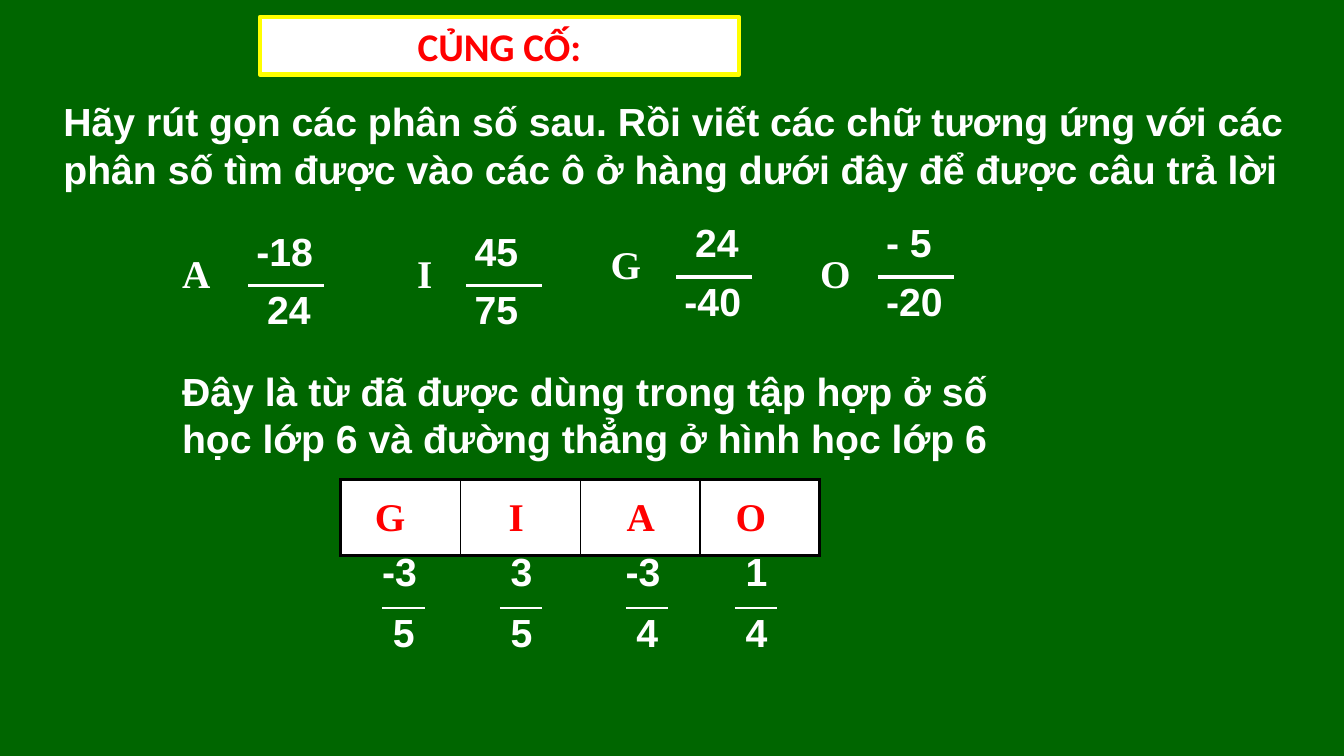
from lxml.etree import SubElement
from pptx import Presentation
from pptx.dml.color import RGBColor
from pptx.enum.shapes import MSO_CONNECTOR as Line
from pptx.enum.text import MSO_ANCHOR as Anchor, MSO_AUTO_SIZE as AutoSize, PP_ALIGN as Align
from pptx.oxml.ns import qn
from pptx.util import Cm, Pt

GREEN, WHITE, RED, YELLOW, BLACK = "006600", "FFFFFF", "FF0000", "FFFF00", "000000"
SIGN_WIDTH = 0.27


def color(hex_string):
    return RGBColor.from_string(hex_string)


def paint(target, hex_string):
    target.fill.solid()
    target.fill.fore_color.rgb = color(hex_string)


def write(frame, text, font="Arial", size=28, ink=WHITE, align=Align.LEFT,
          anchor=Anchor.TOP, inset=None):
    frame.word_wrap = True
    frame.auto_size = AutoSize.NONE
    frame.vertical_anchor = anchor
    if inset is not None:
        frame.margin_left = frame.margin_right = Cm(inset)
        frame.margin_top = frame.margin_bottom = Cm(inset)
    paragraph = frame.paragraphs[0]
    paragraph.alignment = align
    run = paragraph.add_run()
    run.text = text
    run.font.name = font
    run.font.size = Pt(size)
    run.font.bold = True
    run.font.color.rgb = color(ink)


def draw_border(cell, side, width):
    edge = SubElement(cell._tc.get_or_add_tcPr(), qn(f"a:ln{side}"), w=str(Pt(width)))
    SubElement(SubElement(edge, qn("a:solidFill")), qn("a:srgbClr"), val=BLACK)


class Board:
    def __init__(self, slide):
        self.slide = slide
        paint(slide.background, GREEN)

    def title(self, text, x, y, width, height):
        heading = self.slide.shapes.title
        heading.left, heading.top = Cm(x), Cm(y)
        heading.width, heading.height = Cm(width), Cm(height)
        paint(heading, WHITE)
        heading.line.color.rgb = color(YELLOW)
        heading.line.width = Pt(3)
        write(heading.text_frame, text, font="Calibri", ink=RED,
              align=Align.CENTER, anchor=Anchor.MIDDLE)

    def text(self, text, x, y, width, height, **style):
        box = self.slide.shapes.add_textbox(Cm(x), Cm(y), Cm(width), Cm(height))
        write(box.text_frame, text, **style)

    def letter(self, text, x, y, ink=WHITE):
        self.text(text, x, y, 1.9, 1.45, font="Times New Roman", ink=ink)

    def bar(self, x, y, length, weight):
        bar = self.slide.shapes.add_connector(
            Line.STRAIGHT, Cm(x), Cm(y), Cm(x + length), Cm(y))
        bar.line.color.rgb = color(WHITE)
        bar.line.width = Pt(weight)
        SubElement(bar._element.spPr, qn("a:effectLst"))

    def fraction(self, numerator, denominator, x, bar_x, y, length, weight, rise):
        for number, top in ((numerator, y - rise), (denominator, y)):
            indent = 0 if number.startswith("-") else SIGN_WIDTH
            self.text(number, x + indent, top, 1.6, 1.2, inset=0)
        self.bar(bar_x, y, length, weight)

    def answer_row(self, count, x, y, width, height):
        frame = self.slide.shapes.add_table(1, count, Cm(x), Cm(y), Cm(width), Cm(height))
        for index, cell in enumerate(frame.table.iter_cells()):
            draw_border(cell, "L", 2.25 if index == 0 else 1)
            draw_border(cell, "R", 2.25 if index == count - 1 else 1)
            draw_border(cell, "T", 2.25)
            draw_border(cell, "B", 2.25)
            paint(cell, WHITE)


def main():
    deck = Presentation()
    deck.slide_width, deck.slide_height = Cm(33.87), Cm(19.05)
    board = Board(deck.slides.add_slide(deck.slide_layouts[5]))

    board.title("CỦNG CỐ:", 6.55, 0.43, 12.07, 1.45)
    board.text("Hãy rút gọn các phân số sau. Rồi viết các chữ tương ứng với các "
               "phân số tìm được vào các ô ở hàng dưới đây để được câu trả lời",
               1.35, 2.34, 31.83, 2.64)

    exercises = [
        ("A", 4.34, 6.15, "-18", "24", 6.46, 6.25, 7.2),
        ("I", 10.26, 6.15, "45", "75", 11.69, 11.75, 7.2),
        ("G", 15.14, 5.92, "24", "-40", 17.25, 17.04, 6.98),
        ("O", 20.42, 6.15, "- 5", "-20", 22.33, 22.12, 6.98),
    ]
    for letter, letter_x, letter_y, numerator, denominator, x, bar_x, y in exercises:
        board.letter(letter, letter_x, letter_y)
        board.fraction(numerator, denominator, x, bar_x, y, length=1.91, weight=2.25, rise=1.47)

    board.text("Đây là từ đã được dùng trong tập hợp ở số học lớp 6 "
               "và đường thẳng ở hình học lớp 6", 4.34, 9.12, 21.39, 2.64)

    answers = [
        ("G", 9.2, "-3", "5", 9.63),
        ("I", 12.57, "3", "5", 12.6),
        ("A", 15.54, "-3", "4", 15.77),
        ("O", 18.29, "1", "4", 18.52),
    ]
    board.answer_row(len(answers), 8.59, 12.09, 12.07, 1.91)
    for letter, letter_x, numerator, denominator, x in answers:
        board.letter(letter, letter_x, 12.29, ink=RED)
        board.fraction(numerator, denominator, x, x, 15.32, length=1.07, weight=2, rise=1.53)

    deck.save("out.pptx")


if __name__ == "__main__":
    main()
